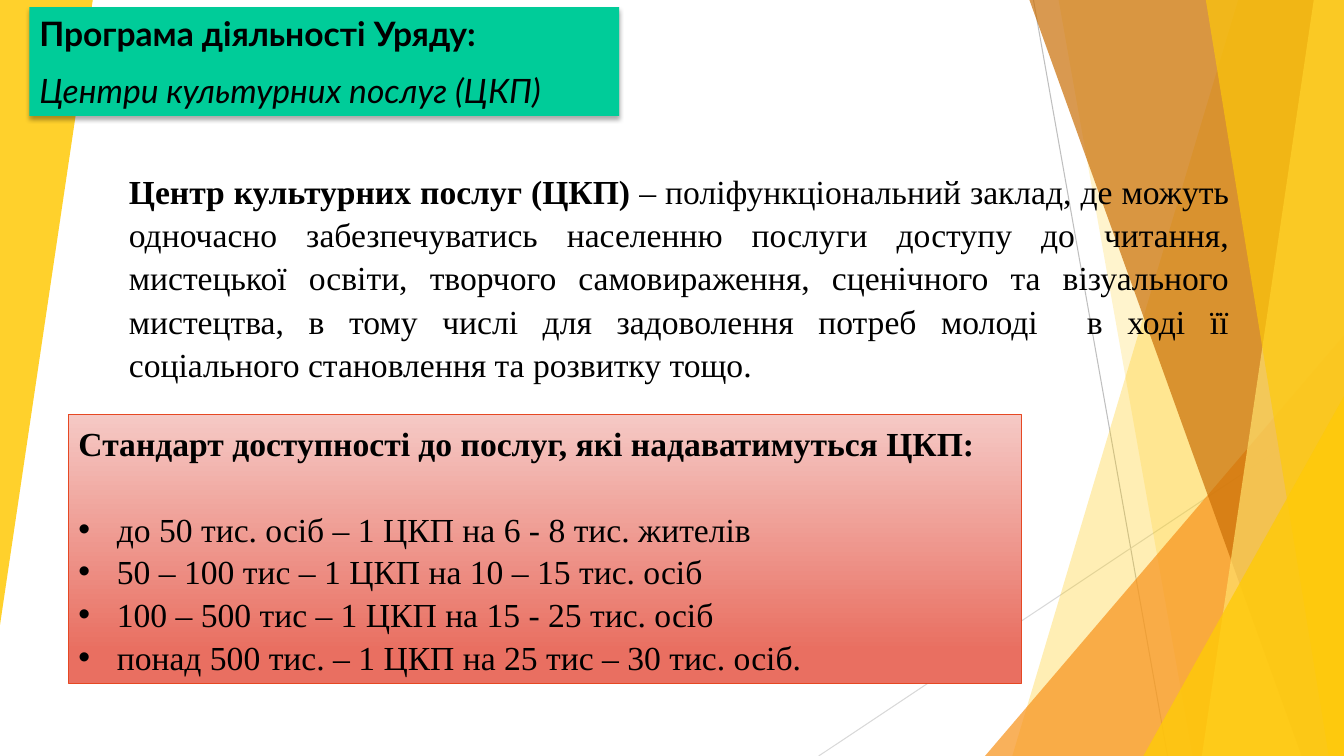
from lxml import etree
from pptx import Presentation
from pptx.dml.color import RGBColor
from pptx.enum import shapes, text
from pptx.oxml import ns
from pptx.util import Inches, Pt

BLACK = RGBColor(0x00, 0x00, 0x00)
GREEN = RGBColor(0x00, 0xCC, 0x99)
YELLOW = RGBColor(0xFF, 0xCA, 0x08)
PALE_YELLOW = RGBColor(0xFF, 0xDF, 0x6B)
ORANGE = RGBColor(0xF8, 0x93, 0x1D)
BROWN = RGBColor(0xCA, 0x6F, 0x06)
GREY = RGBColor(0xBF, 0xBF, 0xBF)
LIGHT_GREY = RGBColor(0xD9, 0xD9, 0xD9)
RED = RGBColor(0xE6, 0x48, 0x23)
PINK = RGBColor(0xF5, 0xC9, 0xC5)
CORAL = RGBColor(0xE9, 0x6F, 0x61)

WIDTH, HEIGHT = 13.33, 7.5
SERIF = "Times New Roman"
STANDARDS = [
    "до 50 тис. осіб – 1 ЦКП на 6 - 8 тис. жителів",
    "50 – 100 тис – 1 ЦКП на 10 – 15 тис. осіб",
    "100 – 500 тис – 1 ЦКП на 15 - 25 тис. осіб",
    "понад 500 тис. – 1 ЦКП на 25 тис – 30 тис. осіб.",
]


def sub(parent, tag, **attributes):
    child = etree.SubElement(parent, ns.qn(tag))
    for key, value in attributes.items():
        child.set(key, str(value))
    return child


def paint(shape, color, opacity):
    shape.shadow.inherit = False
    shape.fill.solid()
    shape.fill.fore_color.rgb = color
    shape.line.fill.background()
    rgb = shape.fill._xPr.find(".//" + ns.qn("a:srgbClr"))
    sub(rgb, "a:alpha", val=opacity * 1000)


def add_ray(slide, start, end, color):
    ray = slide.shapes.add_connector(
        shapes.MSO_CONNECTOR.STRAIGHT, *map(Inches, start + end))
    ray.line.color.rgb = color
    ray.line.width = Pt(0.75)
    sub(ray._element.spPr, "a:effectLst")


def add_facet(slide, top, bottom, color, opacity):
    """Slanted left edge; the rest follows the slide's right side."""
    corners = [(WIDTH, 0), (WIDTH, HEIGHT), (bottom, HEIGHT)]
    outline = slide.shapes.build_freeform(Inches(top), 0)
    outline.add_line_segments([(Inches(x), Inches(y)) for x, y in corners])
    paint(outline.convert_to_shape(), color, opacity)


def add_corner(slide, box, color, opacity, rotation=0):
    corner = slide.shapes.add_shape(
        shapes.MSO_SHAPE.ISOSCELES_TRIANGLE, *map(Inches, box))
    corner.adjustments[0] = 1
    corner.rotation = rotation
    paint(corner, color, opacity)


def add_backdrop(slide):
    add_ray(slide, (10.25, 0), (11.58, HEIGHT), GREY)
    add_ray(slide, (WIDTH, 4.03), (8.12, HEIGHT), LIGHT_GREY)
    add_facet(slide, 12.28, 10.04, YELLOW, 30)
    add_facet(slide, 10.5, 11.83, YELLOW, 20)
    add_corner(slide, (9.77, 3.33, 3.56, 4.17), ORANGE, 72)
    add_facet(slide, 10.21, 12.91, BROWN, 70)
    add_facet(slide, 13.03, 11.92, PALE_YELLOW, 70)
    add_facet(slide, 11.96, 13.18, YELLOW, 65)
    add_corner(slide, (11.34, 3.93, 1.99, 3.57), YELLOW, 80)
    add_corner(slide, (0, 0, 0.92, 6.2), YELLOW, 85, rotation=180)


def set_frame(shape, anchor):
    settings = {"word_wrap": True, "auto_size": text.MSO_AUTO_SIZE.NONE,
                "vertical_anchor": anchor}
    for name, value in settings.items():
        setattr(shape.text_frame, name, value)
    return shape.text_frame


def write(paragraph, words, font=SERIF, **style):
    run = paragraph.add_run()
    run.text = words
    settings = {"name": font, "size": Pt(24), "bold": False, **style}
    for name, value in settings.items():
        setattr(run.font, name, value)
    run.font.color.rgb = BLACK


def layout_paragraph(paragraph, **settings):
    for name, value in settings.items():
        setattr(paragraph, name, value)


def add_bullet(paragraph):
    properties = paragraph._p.get_or_add_pPr()
    properties.set("marL", str(Inches(0.38)))
    properties.set("indent", str(-Inches(0.38)))
    sub(properties, "a:buFont", typeface="Arial")
    sub(properties, "a:buChar", char="•")


def fill_title(slide):
    title = slide.shapes.title
    title.left, title.top, title.width, title.height = map(
        Inches, (0.29, 0.07, 5.85, 1.08))
    title.fill.solid()
    title.fill.fore_color.rgb = GREEN
    # Soft shadow below the banner
    effects = sub(title._element.spPr, "a:effectLst")
    shadow = sub(effects, "a:outerShdw", blurRad=Pt(3.5), dist=Pt(2.2),
                 dir=90 * 60000, rotWithShape=0)
    sub(sub(shadow, "a:srgbClr", val=BLACK), "a:alpha", val=32000)

    frame = set_frame(title, text.MSO_ANCHOR.MIDDLE)
    program, centres = frame.paragraphs[0], frame.add_paragraph()
    for paragraph in (program, centres):
        layout_paragraph(paragraph, alignment=text.PP_ALIGN.LEFT,
                         space_before=Pt(6), space_after=Pt(6))
    write(program, "Програма діяльності Уряду:", "Lato", bold=True)
    write(centres, "Центри культурних послуг (ЦКП)", "Lato", italic=True)
    # Bring the banner in front of the backdrop
    slide.shapes._spTree.append(title._element)


def add_standards(slide):
    panel = slide.shapes.add_shape(
        shapes.MSO_SHAPE.RECTANGLE, *map(Inches, (0.68, 4.11, 9.45, 2.67)))
    panel.shadow.inherit = False
    panel.fill.gradient()
    panel.fill.gradient_angle = 270
    for stop, position, color in zip(
            panel.fill.gradient_stops, (0, 0.88), (PINK, CORAL)):
        stop.position = position
        stop.color.rgb = color
    panel.line.color.rgb = RED
    panel.line.width = Pt(1)

    frame = set_frame(panel, text.MSO_ANCHOR.MIDDLE)
    heading = frame.paragraphs[0]
    layout_paragraph(heading, alignment=text.PP_ALIGN.LEFT,
                     line_spacing=1.06, space_after=Pt(30.5))
    write(heading, "Стандарт доступності до послуг, які надаватимуться ЦКП:",
          bold=True)
    for standard in STANDARDS:
        item = frame.add_paragraph()
        layout_paragraph(item, alignment=text.PP_ALIGN.LEFT, line_spacing=1.06)
        add_bullet(item)
        write(item, standard)


def add_definition(slide):
    box = slide.shapes.add_textbox(*map(Inches, (0.68, 1.62, 11.61, 2.26)))
    definition = set_frame(box, text.MSO_ANCHOR.TOP).paragraphs[0]
    layout_paragraph(definition, alignment=text.PP_ALIGN.JUSTIFY,
                     line_spacing=1.07)
    definition._p.get_or_add_pPr().set("marL", str(Inches(0.5)))
    write(definition, "Центр культурних послуг (ЦКП) ", bold=True)
    write(definition, "– поліфункціональний заклад, де можуть одночасно "
          "забезпечуватись населенню послуги доступу до читання, мистецької "
          "освіти, творчого самовираження, сценічного та візуального "
          "мистецтва, в тому числі для задоволення потреб молоді  в ході її "
          "соціального становлення та розвитку тощо.")


def main():
    deck = Presentation()
    deck.slide_width, deck.slide_height = Inches(WIDTH), Inches(HEIGHT)
    slide = deck.slides.add_slide(deck.slide_layouts[5])
    add_backdrop(slide)
    fill_title(slide)
    add_standards(slide)
    add_definition(slide)
    deck.save("out.pptx")


if __name__ == "__main__":
    main()
